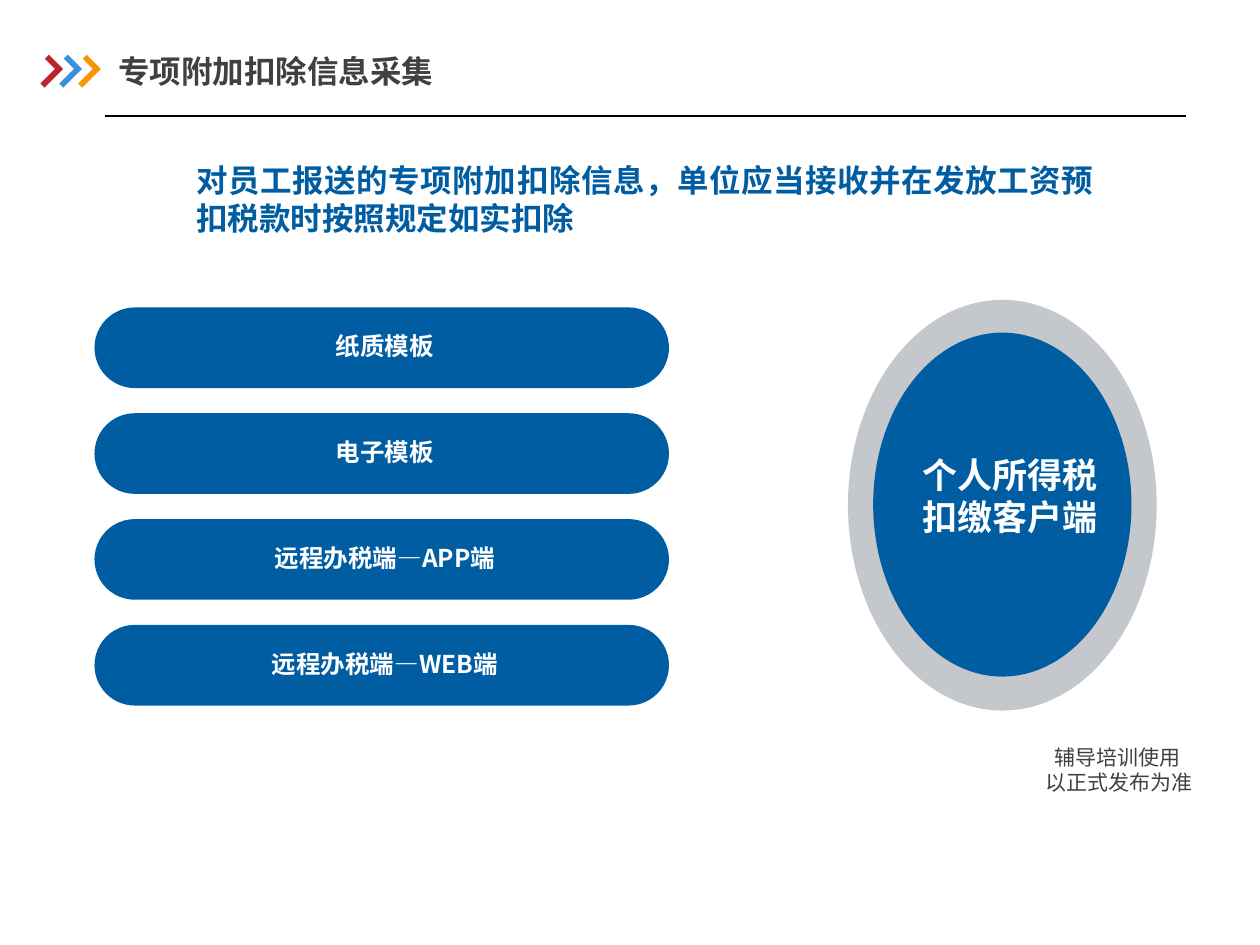
from pptx import Presentation, util as u
from pptx.dml.color import RGBColor
from pptx.enum import shapes, text
from pptx.oxml import ns
from lxml import etree

Inches = u.Inches
FONT = "Noto Sans CJK SC"
BLUE, GREY, DARK, WHITE = "005DA2", "C4C7CB", "404040", "FFFFFF"
CHANNELS = ["纸质模板", "电子模板", "远程办税端—APP端", "远程办税端—WEB端"]


def rgb(value):
    """Turn a hex string into a colour."""
    return RGBColor.from_string(value)


def write(sp, content, size=14, color=WHITE, bold=True, font=FONT, align=None,
          anchor="TOP", insets=(0, 0, 0, 0), spacing=None, indent=0):
    """Fill a shape with one formatted paragraph."""
    tf = sp.text_frame
    tf.word_wrap = True
    tf.vertical_anchor = getattr(text.MSO_ANCHOR, anchor)
    (tf.margin_left, tf.margin_top,
     tf.margin_right, tf.margin_bottom) = map(Inches, insets)
    p = tf.paragraphs[0]
    p.line_spacing = spacing
    if align:
        p.alignment = getattr(text.PP_ALIGN, align)
    if indent:
        p._p.get_or_add_pPr().set("indent", str(Inches(indent)))
    r = p.add_run()
    r.text = content
    r.font.size = u.Pt(size)
    r.font.bold = bold
    r.font.name = font
    r.font.color.rgb = rgb(color)
    ea = etree.SubElement(r._r.get_or_add_rPr(), ns.qn("a:ea"))
    ea.set("typeface", FONT)


def add_text(s, x, y, w, h, content, **fmt):
    """Add a text box with formatted text."""
    sp = s.shapes.add_textbox(Inches(x), Inches(y), Inches(w), Inches(h))
    write(sp, content, **fmt)


def add_shape(s, kind, x, y, w, h, color, adjustments=()):
    """Add a flat preset shape without an outline."""
    sp = s.shapes.add_shape(getattr(shapes.MSO_SHAPE, kind),
                            Inches(x), Inches(y), Inches(w), Inches(h))
    sp.shadow.inherit = False
    sp.fill.solid()
    sp.fill.fore_color.rgb = rgb(color)
    sp.line.fill.background()
    for i, value in enumerate(adjustments):
        sp.adjustments[i] = value
    return sp


def add_header(s, x, y, w, h):
    """Place the chevrons, the title and the rule under them."""
    for i, color in enumerate(["BC242A", "3992DB", "F79600"]):
        sp = add_shape(s, "CORNER", x + 0.15 * i, y + 0.17, 0.16, 0.21,
                       color, (0.28, 0.29))
        sp.rotation = 225
    add_text(s, x + 0.65, y, 5.8, 0.55, "专项附加扣除信息采集", size=18,
             color=DARK, anchor="MIDDLE", insets=(0, 0.05, 0, 0.05))
    rule = s.shapes.add_connector(shapes.MSO_CONNECTOR.STRAIGHT,
                                  Inches(x + 0.54), Inches(y + h),
                                  Inches(x + w), Inches(y + h))
    rule.line.color.rgb = rgb("000000")
    rule.line.width = u.Pt(0.75)
    etree.SubElement(rule._element.spPr, ns.qn("a:effectLst"))


def add_channels(s, x, y, w, h):
    """Stack one labelled pill per channel, evenly spaced in the box."""
    height = 0.64
    pitch = (h - height) / (len(CHANNELS) - 1)
    for i, label in enumerate(CHANNELS):
        sp = add_shape(s, "ROUNDED_RECTANGLE", x, y + i * pitch, w, height,
                       BLUE, (0.5,))
        write(sp, label, align="CENTER", anchor="MIDDLE", spacing=0.9,
              insets=(0.05, 0, 0, 0))


def add_client(s, x, y, w, h):
    """Draw the ringed ellipse with its label."""
    add_shape(s, "DONUT", x, y, w, h, GREY, (0.12,))
    add_shape(s, "OVAL", x + 0.2, y + 0.26, 2.05, 2.73, BLUE)
    add_text(s, x + 0.52, y + 1.03, 1.53, 1.04, "个人所得税扣缴客户端",
             size=20, align="CENTER", anchor="MIDDLE")


def main():
    """Build the slide and save it."""
    prs = Presentation()
    prs.slide_width, prs.slide_height = Inches(10), Inches(7.5)
    s = prs.slides.add_slide(prs.slide_layouts[6])
    padding = (0.1, 0.05, 0.1, 0.05)
    add_header(s, 0.29, 0.29, 9.12, 0.63)
    add_text(s, 1.46, 1.23, 7.32, 0.71,
             "对员工报送的专项附加扣除信息，单位应当接收并在发放工资预扣税款时按照规定如实扣除",
             size=18, color=BLUE, font="Calibri", align="JUSTIFY",
             insets=padding)
    add_channels(s, 0.75, 2.44, 4.56, 3.16)
    add_client(s, 6.73, 2.38, 2.45, 3.26)
    add_text(s, 8.2, 5.86, 1.41, 0.5, "辅导培训使用以正式发布为准", size=12,
             color=DARK, bold=False, insets=padding, indent=0.07)
    prs.save("out.pptx")


if __name__ == "__main__":
    main()
